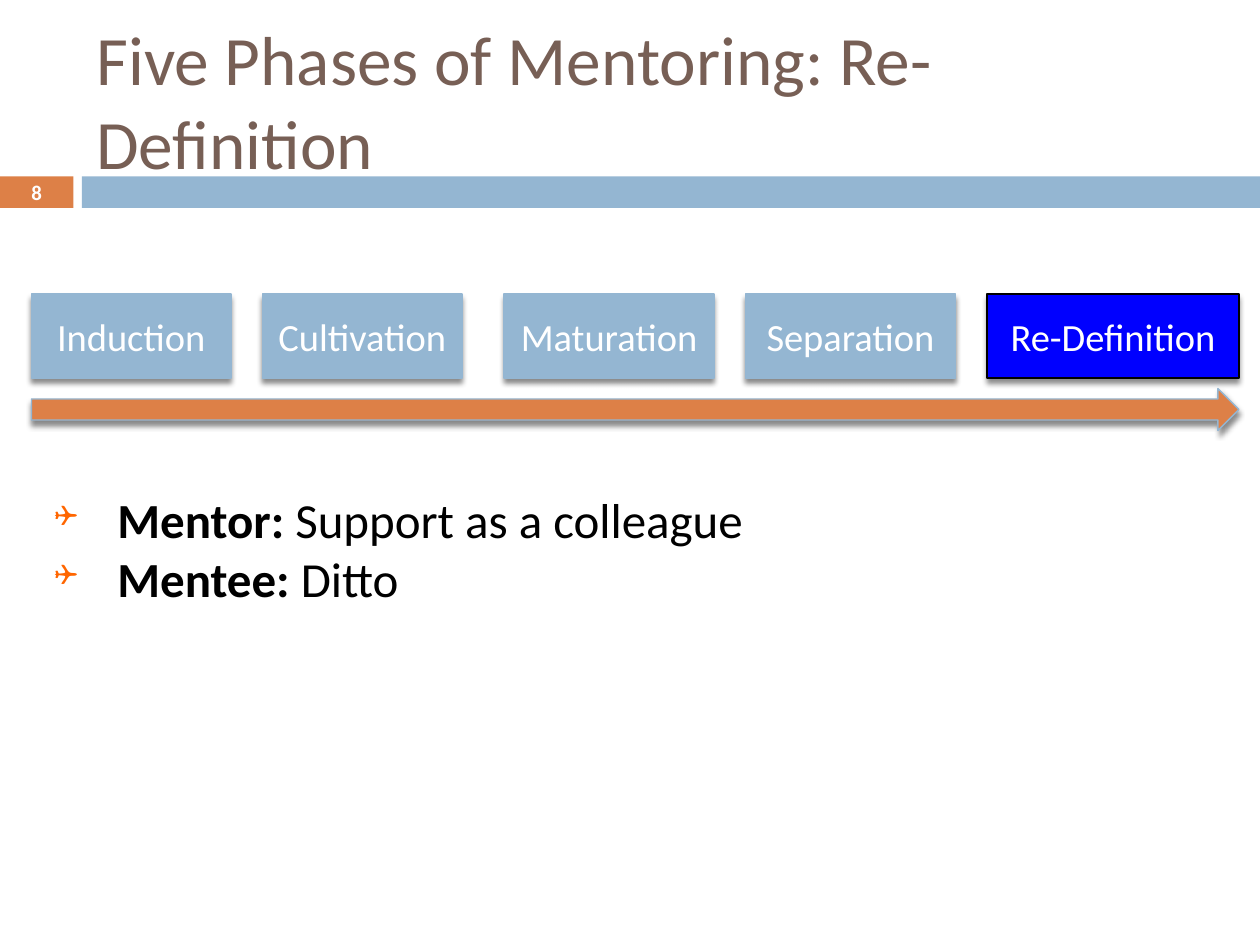
from lxml.etree import SubElement
from pptx import Presentation
from pptx.dml.color import RGBColor
from pptx.enum.shapes import MSO_SHAPE
from pptx.enum.text import MSO_ANCHOR, PP_ALIGN
from pptx.oxml.ns import qn
from pptx.util import Emu, Pt

PX = 7620  # EMU in one px, 120 px to the inch
FONT = "Calibri"
BROWN = RGBColor(0x77, 0x5F, 0x55)
ORANGE = RGBColor(0xDD, 0x80, 0x47)
BULLET_ORANGE = RGBColor(0xFF, 0x66, 0x00)
LIGHT_BLUE = RGBColor(0x94, 0xB6, 0xD2)
BLUE = RGBColor(0x00, 0x00, 0xFF)
BLACK = RGBColor(0x00, 0x00, 0x00)
WHITE = RGBColor(0xFF, 0xFF, 0xFF)

# Phase name, left within the row, width
PHASES = [
    ("Induction", 0, 190),
    ("Cultivation", 220, 190),
    ("Maturation", 450, 200),
    ("Separation", 680, 200),
    ("Re-Definition", 910, 240),
]
CURRENT_PHASE = "Re-Definition"
ROLES = [("Mentor: ", "Support as a colleague"), ("Mentee: ", "Ditto")]


def px(*lengths):
    return [Emu(length * PX) for length in lengths]


def add_span(para, text, size, color, bold=False):
    span = para.add_run()
    span.text = text
    span.font.name = FONT
    span.font.size = Pt(size)
    span.font.bold = bold
    span.font.color.rgb = color


def write(box, text, size=22, color=WHITE, bold=False, align=PP_ALIGN.CENTER):
    frame = box.text_frame
    frame.word_wrap = True
    frame.vertical_anchor = MSO_ANCHOR.MIDDLE
    para = frame.paragraphs[0]
    para.alignment = align
    add_span(para, text, size, color, bold)


def add_shadow(shape):
    effects = shape._element.spPr.find(qn("a:effectLst"))
    shadow = SubElement(effects, qn("a:outerShdw"), blurRad=str(Pt(3)),
                        dist=str(Pt(2.4)), dir="5400000", rotWithShape="0")
    color = SubElement(shadow, qn("a:srgbClr"), val=str(BLACK))
    SubElement(color, qn("a:alpha"), val="45000")


def add_block(page, kind, bounds, fill, line=None):
    """Add a filled shape; an outlined one also casts a shadow."""
    shape = page.shapes.add_shape(kind, *px(*bounds))
    shape.shadow.inherit = False
    shape.fill.solid()
    shape.fill.fore_color.rgb = fill
    if line is None:
        shape.line.fill.background()
    else:
        shape.line.color.rgb = line
        shape.line.width = Pt(0.79)
        add_shadow(shape)
    return shape


def add_bullet(para, indent):
    props = para._p.get_or_add_pPr()
    props.set("marL", str(indent * PX))
    props.set("indent", str(-indent * PX))
    color = SubElement(props, qn("a:buClr"))
    SubElement(color, qn("a:srgbClr"), val=str(BULLET_ORANGE))
    SubElement(props, qn("a:buSzPct"), val="60000")
    SubElement(props, qn("a:buFont"), typeface="Wingdings")
    SubElement(props, qn("a:buChar"), char="❑")


def add_header(page, left, top, width):
    # Title
    title = page.shapes.add_textbox(*px(left + 80, top + 30, 1070, 130))
    write(title, "Five Phases of Mentoring: Re-Definition", size=39.6,
          color=BROWN, align=PP_ALIGN.LEFT)
    # Band with the page number
    band_top, band_height = top + 168, 30
    add_block(page, MSO_SHAPE.RECTANGLE, (left + 78, band_top, width - 78, band_height),
              LIGHT_BLUE)
    number = add_block(page, MSO_SHAPE.RECTANGLE, (left, band_top, 70, band_height), ORANGE)
    number.text_frame.margin_top = number.text_frame.margin_bottom = 0
    write(number, "8", size=11.9, bold=True)


def add_phases(page, left, top, width):
    # Row of phases, the current one highlighted
    for name, offset, box_width in PHASES:
        current = name == CURRENT_PHASE
        box = add_block(page, MSO_SHAPE.RECTANGLE, (left + offset, top, box_width, 80),
                        BLUE if current else LIGHT_BLUE,
                        BLACK if current else LIGHT_BLUE)
        write(box, name)
    # Arrow of progress
    add_block(page, MSO_SHAPE.RIGHT_ARROW, (left, top + 90, width, 40), ORANGE, LIGHT_BLUE)


def add_roles(page, left, top, width, height):
    box = page.shapes.add_textbox(*px(left, top, width, height))
    frame = box.text_frame
    frame.word_wrap = True
    for index, (role, duty) in enumerate(ROLES):
        para = frame.add_paragraph() if index else frame.paragraphs[0]
        add_bullet(para, indent=60)
        add_span(para, role, 28, BLACK, bold=True)
        add_span(para, duty, 28, BLACK)


def main():
    deck = Presentation()
    deck.slide_width, deck.slide_height = px(1200, 900)
    page = deck.slides.add_slide(deck.slide_layouts[6])
    add_header(page, 0, 0, 1200)
    add_phases(page, 30, 280, 1150)
    add_roles(page, 40, 460, 1130, 125)
    deck.save("out.pptx")


if __name__ == "__main__":
    main()
